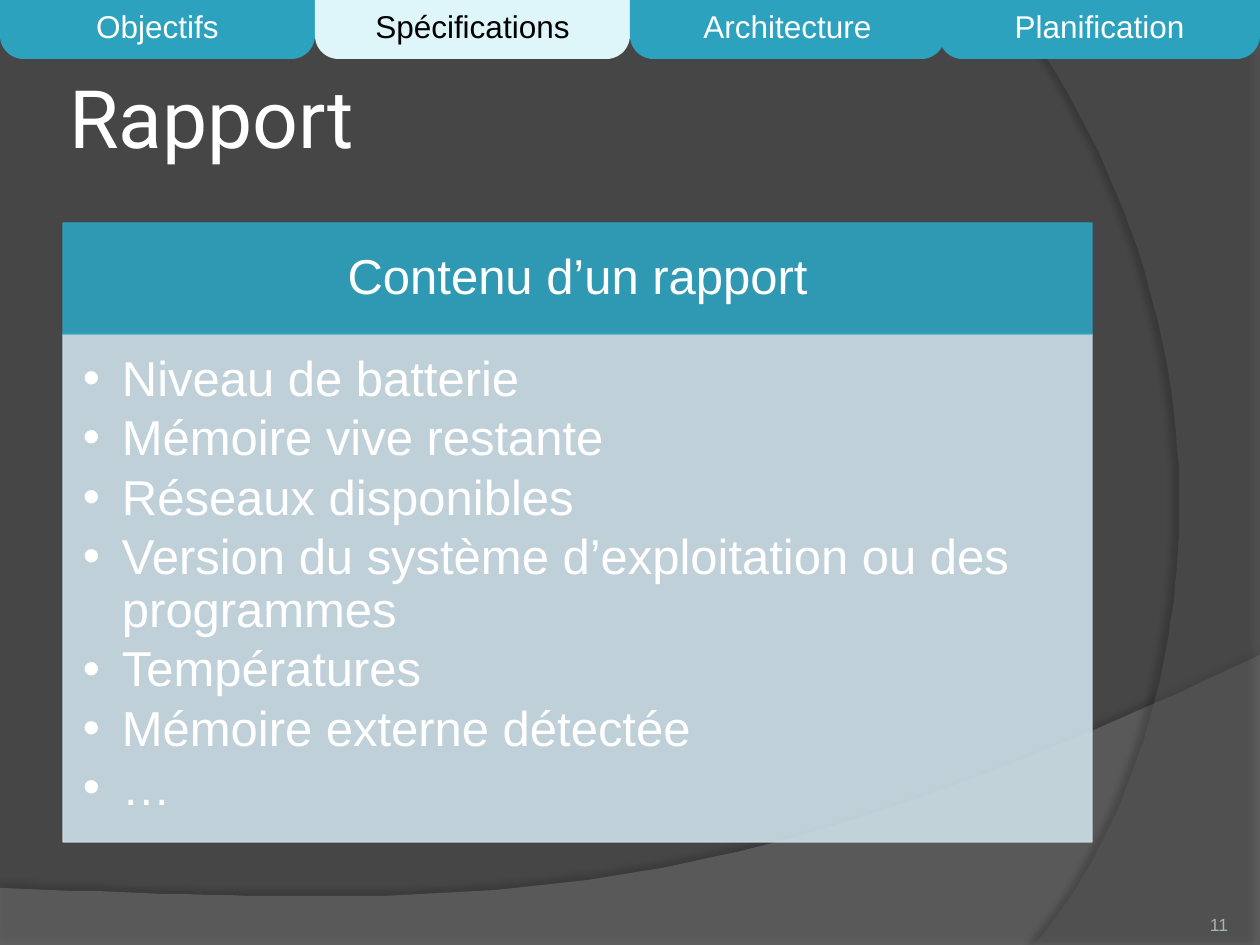
from dataclasses import dataclass

import lxml.etree
import pptx
import pptx.dml.color
import pptx.enum.shapes
import pptx.enum.text
import pptx.oxml.ns
import pptx.util

RGBColor = pptx.dml.color.RGBColor
ALIGN = pptx.enum.text.PP_ALIGN
ANCHOR = pptx.enum.text.MSO_ANCHOR
qn = pptx.oxml.ns.qn

EMU_PER_PX = 914400 / 126
BACKGROUND = RGBColor(0x46, 0x46, 0x46)
WAVE = RGBColor(0x7F, 0x7F, 0x7F)
ARC = RGBColor(0x5E, 0x5E, 0x5E)
TEAL = RGBColor(0x2D, 0xA2, 0xBF)
PALE_TEAL = RGBColor(0xDE, 0xF5, 0xFA)
PANEL = RGBColor(0xCD, 0xE0, 0xE8)
PAGE_GREY = RGBColor(0xA4, 0xB5, 0xB9)
WHITE = RGBColor(0xFF, 0xFF, 0xFF)
BLACK = RGBColor(0, 0, 0)


@dataclass
class Box:
    left: int
    top: int
    width: int
    height: int


@dataclass
class Tab:
    label: str
    box: Box
    fill: RGBColor = TEAL
    color: RGBColor = WHITE


@dataclass
class Swoosh:
    """An outline whose closing side is a Bezier curve, with a soft shadow."""
    corners: list[tuple[int, int]]
    curve: list[tuple[int, int]]
    fill: RGBColor
    opacity: int
    shadow_opacity: int
    shadow_distance: float
    shadow_angle: int


TABS = [
    Tab("Objectifs", Box(0, 0, 315, 59)),
    Tab("Spécifications", Box(315, 0, 315, 59), PALE_TEAL, BLACK),
    Tab("Architecture", Box(630, 0, 315, 59)),
    Tab("Planification", Box(939, 0, 321, 59)),
]
SWOOSHES = [
    Swoosh([(0, 888), (0, 946), (1260, 946)],
           [(1260, 655), (704, 919), (493, 906), (0, 888)],
           WAVE, 45, 35, 3.5, 270),
    Swoosh([(1260, 2), (1260, 945)],
           [(1034, 945), (1178, 780), (1283, 378), (1008, 0)],
           ARC, 40, 45, 4, 180),
]
REPORT_ITEMS = [
    "Niveau de batterie",
    "Mémoire vive restante",
    "Réseaux disponibles",
    "Version du système d’exploitation ou des programmes",
    "Températures",
    "Mémoire externe détectée",
    "…",
]


def px(length: float) -> int:
    return round(length * EMU_PER_PX)


def place(shape, box: Box) -> None:
    shape.left, shape.top = px(box.left), px(box.top)
    shape.width, shape.height = px(box.width), px(box.height)


def set_opacity(fill, percent: int) -> None:
    color = fill._xPr.find(qn("a:solidFill"))[0]
    lxml.etree.SubElement(color, qn("a:alpha"), val=str(percent * 1000))


def paint(shape, color: RGBColor, opacity: int = 100, outlined: bool = False) -> None:
    shape.fill.solid()
    shape.fill.fore_color.rgb = color
    if outlined:
        shape.line.width = pptx.util.Pt(0.75)
        shape.line.color.rgb = color
        set_opacity(shape.line.fill, opacity)
    else:
        shape.line.fill.background()
    if opacity < 100:
        set_opacity(shape.fill, opacity)


def set_frame(shape, anchor, margins: tuple[int, int, int, int]) -> None:
    frame = shape.text_frame
    frame.word_wrap = True
    frame.auto_size = pptx.enum.text.MSO_AUTO_SIZE.NONE
    frame.vertical_anchor = anchor
    (frame.margin_left, frame.margin_top,
     frame.margin_right, frame.margin_bottom) = map(px, margins)


def write(paragraph, text: str, size: int, color: RGBColor, align, font: str = "Arial") -> None:
    paragraph.alignment = align
    run = paragraph.add_run()
    run.text = text
    run.font.name = font
    run.font.size = pptx.util.Pt(size)
    run.font.color.rgb = color


def add_bullet(paragraph) -> None:
    properties = paragraph._p.get_or_add_pPr()
    properties.set("marL", str(px(39)))
    properties.set("indent", str(px(-39)))
    lxml.etree.SubElement(properties, qn("a:buFont"), typeface="Arial")
    lxml.etree.SubElement(properties, qn("a:buChar"), char="•")


def add_shape(slide, preset, box: Box):
    shape = slide.shapes.add_shape(preset, 0, 0, 0, 0)
    place(shape, box)
    shape.shadow.inherit = False
    return shape


def add_swoosh(slide, swoosh: Swoosh) -> None:
    points = list(swoosh.corners)
    steps = 60
    for step in range(steps + 1):
        t = step / steps
        weights = ((1 - t) ** 3, 3 * t * (1 - t) ** 2, 3 * t ** 2 * (1 - t), t ** 3)
        points.append(tuple(sum(weight * point[axis] for weight, point in zip(weights, swoosh.curve))
                            for axis in (0, 1)))
    builder = slide.shapes.build_freeform(*points[0], scale=EMU_PER_PX)
    builder.add_line_segments(points[1:], close=True)
    shape = builder.convert_to_shape()
    paint(shape, swoosh.fill, swoosh.opacity)
    shape.shadow.inherit = False
    effects = shape._element.spPr.find(qn("a:effectLst"))
    shadow = lxml.etree.SubElement(
        effects, qn("a:outerShdw"), blurRad=str(pptx.util.Pt(4)),
        dist=str(pptx.util.Pt(swoosh.shadow_distance)),
        dir=str(swoosh.shadow_angle * 60000), algn="ctr", rotWithShape="0")
    color = lxml.etree.SubElement(shadow, qn("a:srgbClr"), val="000000")
    lxml.etree.SubElement(color, qn("a:alpha"), val=str(swoosh.shadow_opacity * 1000))


def add_tab(slide, tab: Tab) -> None:
    shape = add_shape(slide, pptx.enum.shapes.MSO_SHAPE.ROUND_2_SAME_RECTANGLE, tab.box)
    shape.adjustments[0], shape.adjustments[1] = 0, 0.4
    paint(shape, tab.fill)
    set_frame(shape, ANCHOR.MIDDLE, (13, 6, 13, 6))
    write(shape.text_frame.paragraphs[0], tab.label, 18, tab.color, ALIGN.CENTER)


def main() -> None:
    presentation = pptx.Presentation()
    presentation.slide_width, presentation.slide_height = px(1260), px(945)
    slide = presentation.slides.add_slide(presentation.slide_layouts[1])
    title, report = slide.placeholders

    # Background and its curves, kept behind the placeholders
    slide.background.fill.solid()
    slide.background.fill.fore_color.rgb = BACKGROUND
    for swoosh in SWOOSHES:
        add_swoosh(slide, swoosh)
    for placeholder in (title, report):
        slide.shapes._spTree.append(placeholder._element)

    # Title
    place(title, Box(63, 38, 1029, 157))
    set_frame(title, ANCHOR.MIDDLE, (6, 6, 6, 6))
    write(title.text_frame.paragraphs[0], "Rapport", 46, WHITE, ALIGN.LEFT, "Roboto")

    # Report panel: heading and list
    heading = add_shape(slide, pptx.enum.shapes.MSO_SHAPE.RECTANGLE, Box(63, 223, 1029, 111))
    paint(heading, TEAL, 90, outlined=True)
    set_frame(heading, ANCHOR.MIDDLE, (28, 15, 28, 15))
    write(heading.text_frame.paragraphs[0], "Contenu d’un rapport", 28, WHITE, ALIGN.CENTER)
    heading.text_frame.paragraphs[0].line_spacing = 0.9

    place(report, Box(63, 334, 1029, 508))
    paint(report, PANEL, 90, outlined=True)
    set_frame(report, ANCHOR.TOP, (20, 20, 28, 30))
    for index, item in enumerate(REPORT_ITEMS):
        frame = report.text_frame
        paragraph = frame.add_paragraph() if index else frame.paragraphs[0]
        write(paragraph, item, 28, WHITE, ALIGN.LEFT)
        paragraph.line_spacing = 0.9
        paragraph.space_before = pptx.util.Pt(0)
        paragraph.space_after = pptx.util.Pt(3.7)
        add_bullet(paragraph)

    # Page number
    number = slide.shapes.add_textbox(0, 0, 0, 0)
    place(number, Box(1124, 885, 104, 50))
    set_frame(number, ANCHOR.BOTTOM, (0, 0, 0, 0))
    write(number.text_frame.paragraphs[0], "11", 10, PAGE_GREY, ALIGN.RIGHT)

    # Navigation tabs
    for tab in TABS:
        add_tab(slide, tab)

    presentation.save("out.pptx")


if __name__ == "__main__":
    main()
